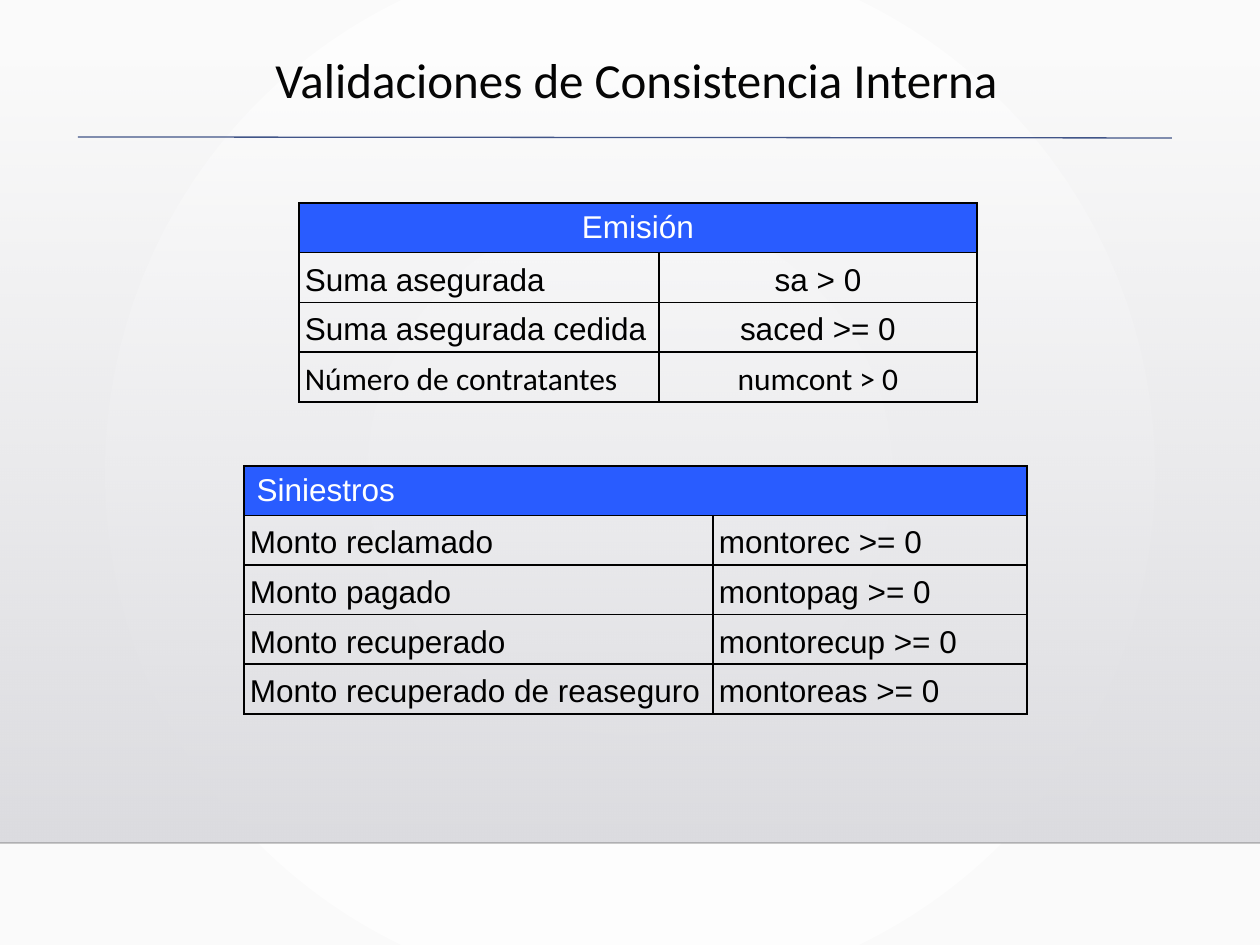
from lxml import etree
from pptx import Presentation
from pptx.dml.color import RGBColor
from pptx.enum.shapes import MSO_CONNECTOR, MSO_SHAPE
from pptx.enum.text import MSO_ANCHOR, PP_ALIGN
from pptx.oxml import parse_xml
from pptx.oxml.ns import qn
from pptx.util import Pt

STRAIGHT = MSO_CONNECTOR.STRAIGHT
RECT = MSO_SHAPE.RECTANGLE
MIDDLE = MSO_ANCHOR.MIDDLE
LEFT, CENTER, JUSTIFY = PP_ALIGN.LEFT, PP_ALIGN.CENTER, PP_ALIGN.JUSTIFY

SCALE = 914400 / 126
NS = "http://schemas.openxmlformats.org/drawingml/2006/main"
COLORS = {
    "white": "FFFFFF",
    "paper": "FAFAFA",
    "haze_top": "DCDCE0",
    "haze_bottom": "DADADE",
    "edge": "000001",
    "rule": "415588",
    "header": "295CFF",
    "text": "000000",
}
EMISSION = [
    ("Suma asegurada", "sa > 0"),
    ("Suma asegurada cedida", "saced >= 0"),
    ("Número de contratantes", "numcont > 0"),
]
CLAIMS = [
    ("Monto reclamado", "montorec >= 0"),
    ("Monto pagado", "montopag >= 0"),
    ("Monto recuperado", "montorecup >= 0"),
    ("Monto recuperado de reaseguro", "montoreas >= 0"),
]


def px(n):
    return round(n * SCALE)


def rgb(name):
    return RGBColor.from_string(COLORS[name])


def gradient(stops, direction):
    gs = "".join(
        f'<a:gs pos="{pos * 1000}"><a:srgbClr val="{COLORS[color]}">'
        f'<a:alpha val="{alpha * 1000}"/></a:srgbClr></a:gs>'
        for pos, color, alpha in stops
    )
    return parse_xml(
        f'<a:gradFill xmlns:a="{NS}" rotWithShape="1">'
        f"<a:gsLst>{gs}</a:gsLst>{direction}</a:gradFill>"
    )


def set_background(slide):
    fill = slide.background.fill
    fill.solid()
    solid = slide.background._cSld.find(".//" + qn("a:solidFill"))
    center = '<a:path path="circle"><a:fillToRect l="50000" t="50000" r="50000" b="50000"/></a:path>'
    solid.getparent().replace(
        solid, gradient([(0, "white", 100), (100, "paper", 100)], center)
    )


def add_haze(slide, x, y, w, h):
    sp = slide.shapes.add_shape(RECT, px(x), px(y), px(w), px(h))
    sp.shadow.inherit = False
    sp.line.fill.background()
    sp.fill.solid()
    solid = sp._element.spPr.find(qn("a:solidFill"))
    down = '<a:lin ang="5400000" scaled="0"/>'
    sp._element.spPr.replace(
        solid, gradient([(0, "haze_top", 0), (100, "haze_bottom", 100)], down)
    )


def add_line(slide, x1, y1, x2, y2, color, width, alpha=100):
    line = slide.shapes.add_connector(STRAIGHT, px(x1), px(y1), px(x2), px(y2))
    line.line.color.rgb = rgb(color)
    line.line.width = Pt(width)
    spPr = line._element.spPr
    if alpha < 100:
        clr = spPr.find(".//" + qn("a:srgbClr"))
        etree.SubElement(clr, qn("a:alpha")).set("val", str(alpha * 1000))
    etree.SubElement(spPr, qn("a:effectLst"))


def format_text(p, size, font, color, align):
    p.alignment = align
    for r in p.runs:
        r.font.size = Pt(size)
        r.font.name = font
        r.font.color.rgb = rgb(color)


def set_title(slide, text, x, y, w, h):
    sp = slide.shapes.title
    sp.left, sp.top, sp.width, sp.height = px(x), px(y), px(w), px(h)
    tf = sp.text_frame
    tf.text = text
    tf.vertical_anchor = MIDDLE
    format_text(tf.paragraphs[0], 28, "Calibri", "text", CENTER)


def set_borders(cell):
    tcPr = cell._tc.get_or_add_tcPr()
    for side in ("lnL", "lnR", "lnT", "lnB"):
        tcPr.append(parse_xml(
            f'<a:{side} xmlns:a="{NS}" w="12700"><a:solidFill>'
            f'<a:srgbClr val="{COLORS["text"]}"/></a:solidFill></a:{side}>'
        ))


def fill_header(cell, text, align):
    cell.fill.solid()
    cell.fill.fore_color.rgb = rgb("header")
    cell.text = text
    format_text(cell.text_frame.paragraphs[0], 18, "Arial", "white", align)


def fill_body(cell, text, font, align):
    cell.fill.background()
    cell.margin_left = cell.margin_right = px(6)
    cell.margin_top = cell.margin_bottom = 0
    cell.text = text
    p = cell.text_frame.paragraphs[0]
    p.line_spacing = 1.15
    format_text(p, 18, font, "text", align)


def add_rules_table(slide, x, y, widths, h, header, rows, aligns, calibri_rows=()):
    n = len(rows) + 1
    table = slide.shapes.add_table(
        n, 2, px(x), px(y), px(sum(widths)), px(h)
    ).table
    table.first_row = table.horz_banding = False
    for col, w in zip(table.columns, widths):
        col.width = px(w)
    for row in table.rows:
        row.height = px(h / n)
    for cell in table.iter_cells():
        cell.vertical_anchor = MIDDLE
        set_borders(cell)
    table.cell(0, 0).merge(table.cell(0, 1))
    fill_header(table.cell(0, 0), header, aligns[1])
    for i, row in enumerate(rows, 1):
        font = "Calibri" if i in calibri_rows else "Arial"
        for j, text in enumerate(row):
            fill_body(table.cell(i, j), text, font, aligns[j])


def main():
    prs = Presentation()
    prs.slide_width, prs.slide_height = px(1260), px(945)
    slide = prs.slides.add_slide(prs.slide_layouts[5])
    set_background(slide)
    add_haze(slide, 0, 64, 1260, 779)
    add_line(slide, 0, 843, 1260, 843, "edge", 1, alpha=20)
    set_title(slide, "Validaciones de Consistencia Interna", 174, 43, 925, 72)
    add_line(slide, 78, 137, 1172, 138, "rule", 0.75)
    add_rules_table(slide, 299, 203, (360, 318), 199, "Emisión", EMISSION,
                    (JUSTIFY, CENTER), calibri_rows=(3,))
    add_rules_table(slide, 244, 466, (469, 314), 248, "Siniestros", CLAIMS,
                    (LEFT, LEFT))
    prs.save("out.pptx")


if __name__ == "__main__":
    main()
